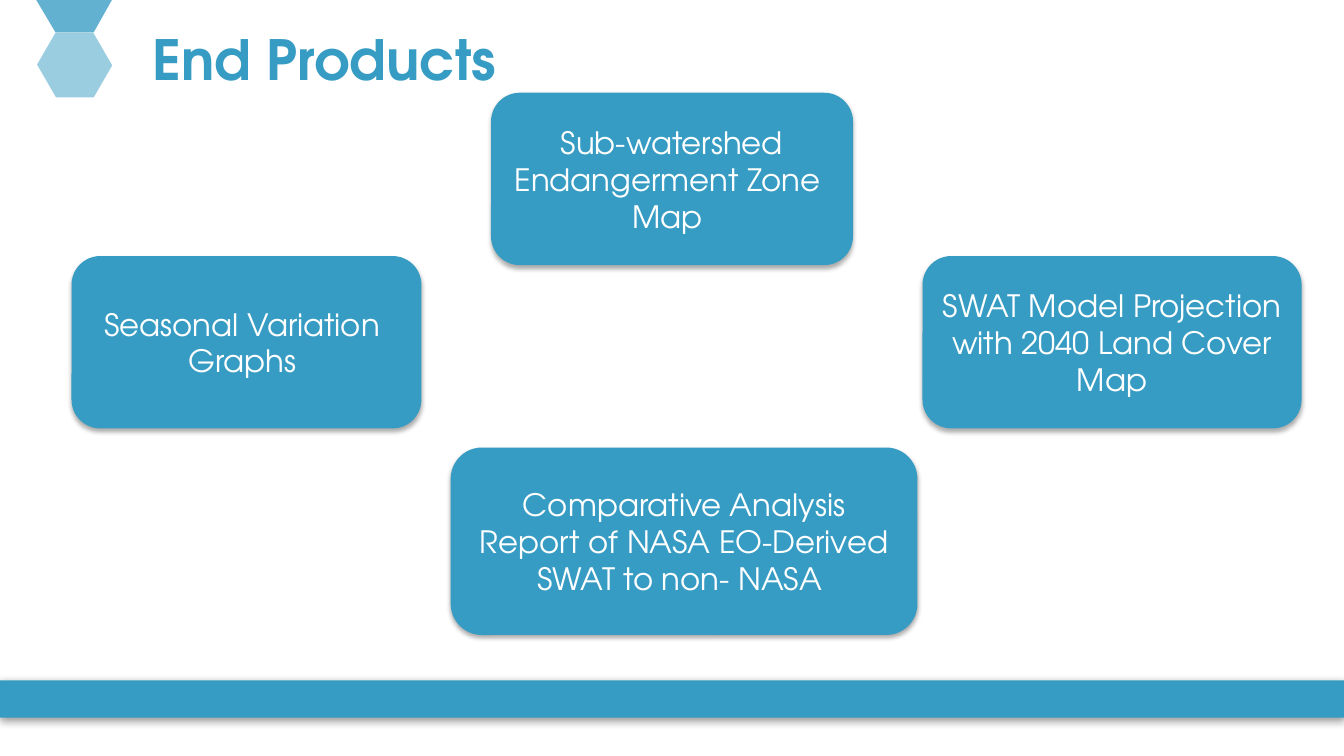
import pptx
import pptx.util
import pptx.dml.color
import pptx.enum.shapes
import pptx.enum.text
import pptx.oxml
import pptx.oxml.ns

Inches = pptx.util.Inches
Pt = pptx.util.Pt
Shape = pptx.enum.shapes.MSO_SHAPE
Align = pptx.enum.text.PP_ALIGN
Anchor = pptx.enum.text.MSO_ANCHOR

COLORS = {"blue": "379CC3", "white": "FFFFFF", "shadow": "000000"}
FONT = "TeX Gyre Adventor"


def paint(shape, opacity=100, shadow=None):
    """Fill in blue without outline; shadow is (opacity, blur, distance) in % and points."""
    shape.fill.solid()
    shape.fill.fore_color.rgb = pptx.dml.color.RGBColor.from_string(COLORS["blue"])
    shape.line.fill.background()
    shape.shadow.inherit = False
    properties = shape._element.spPr
    if opacity < 100:
        color = properties.find(".//" + pptx.oxml.ns.qn("a:srgbClr"))
        color.append(pptx.oxml.parse_xml(
            f'<a:alpha {pptx.oxml.ns.nsdecls("a")} val="{opacity * 1000}"/>'))
    if shadow:
        strength, blur, distance = shadow
        properties.find(pptx.oxml.ns.qn("a:effectLst")).append(pptx.oxml.parse_xml(
            f'<a:outerShdw {pptx.oxml.ns.nsdecls("a")} blurRad="{Pt(blur)}" '
            f'dist="{Pt(distance)}" dir="5400000" algn="t" rotWithShape="0">'
            f'<a:srgbClr val="{COLORS["shadow"]}"><a:alpha val="{strength * 1000}"/>'
            '</a:srgbClr></a:outerShdw>'))


def add_text(para, text, size, color, bold=False):
    span = para.add_run()
    span.text = text
    span.font.name = FONT
    span.font.size = Pt(size)
    span.font.bold = bold
    span.font.color.rgb = pptx.dml.color.RGBColor.from_string(COLORS[color])


deck = pptx.Presentation()
deck.slide_width = Inches(13.33)
deck.slide_height = Inches(7.5)
page = deck.slides.add_slide(deck.slide_layouts[5])

# Hexagon ornament, in hundredths of an inch, and footer band
outline = page.shapes.build_freeform(36, 0, scale=Inches(0.01))
outline.add_line_segments([(111, 0), (93, 32), (55, 32)], close=True)
paint(outline.convert_to_shape(), opacity=78)

hexagon = page.shapes.add_shape(
    Shape.HEXAGON, Inches(0.37), Inches(0.32), Inches(0.74), Inches(0.65))
hexagon.adjustments[0] = 0.288
hexagon.rotation = 120
paint(hexagon, opacity=50)

band = page.shapes.add_shape(
    Shape.RECTANGLE, 0, Inches(6.75), deck.slide_width, Inches(0.37))
paint(band, shadow=(40, 6, 2))

# Title
title = page.shapes.title
title.left, title.top = Inches(1.41), Inches(0.41)
title.width, title.height = Inches(11.5), Inches(0.43)
title.text_frame.auto_size = pptx.enum.text.MSO_AUTO_SIZE.NONE
title.text_frame.vertical_anchor = Anchor.MIDDLE
heading = title.text_frame.paragraphs[0]
heading.alignment = Align.LEFT
heading.line_spacing = 0.9
add_text(heading, "End Products", 39.6, "blue", bold=True)

# Product boxes: left, top, width, height, paragraphs
products = [
    (0.71, 2.54, 3.47, 1.71, ["Seasonal Variation ", "Graphs "]),
    (4.87, 0.92, 3.59, 1.71, ["Sub-watershed Endangerment Zone ", "Map "]),
    (9.15, 2.54, 3.76, 1.71, ["SWAT Model Projection with 2040 Land Cover Map"]),
    (4.47, 4.44, 4.63, 1.86,
     ["Comparative Analysis Report of NASA EO-Derived SWAT to non- NASA "]),
]
for left, top, width, height, lines in products:
    box = page.shapes.add_shape(
        Shape.ROUNDED_RECTANGLE, Inches(left), Inches(top), Inches(width), Inches(height))
    paint(box, shadow=(32, 3.5, 2.2))
    frame = box.text_frame
    frame.word_wrap = True
    frame.vertical_anchor = Anchor.MIDDLE
    for index, line in enumerate(lines):
        para = frame.add_paragraph() if index else frame.paragraphs[0]
        para.alignment = Align.CENTER
        add_text(para, line, 22, "white")

deck.save("out.pptx")
